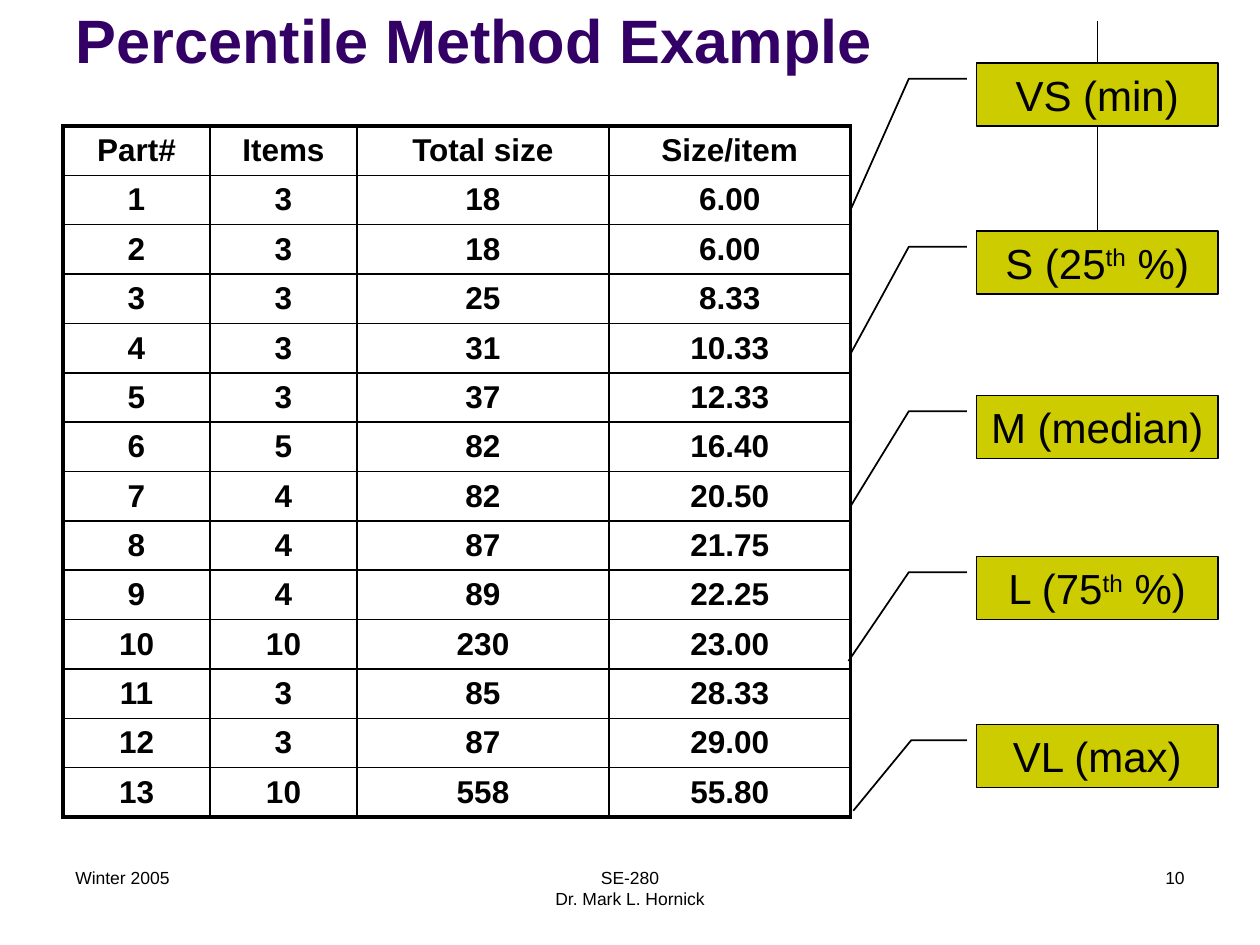
import lxml.etree
import pptx
import pptx.dml.color
import pptx.enum.shapes
import pptx.enum.text
import pptx.oxml.ns
import pptx.util

Pt = pptx.util.Pt
qn = pptx.oxml.ns.qn
ALIGN = pptx.enum.text.PP_ALIGN
ANCHOR = pptx.enum.text.MSO_ANCHOR

TITLE = "Percentile Method Example"
HEADER = ("Part#", "Items", "Total size", "Size/item")
PARTS = [  # items, total size, size per item
    (3, 18, "6.00"), (3, 18, "6.00"), (3, 25, "8.33"), (3, 31, "10.33"),
    (3, 37, "12.33"), (5, 82, "16.40"), (4, 82, "20.50"), (4, 87, "21.75"),
    (4, 89, "22.25"), (10, 230, "23.00"), (3, 85, "28.33"), (3, 87, "29.00"),
    (10, 558, "55.80"),
]
SIZE_CLASSES = [  # label pieces (every second one raised), top, elbow x, tip y, tip x
    (["M (median)"], 226, -0.28, 1.75, -0.52),
    (["VS (min)"], 36, -0.28, 2.32, -0.52),
    (["VL (max)"], 414, -0.27, 1.37, -0.51),
    (["S (25", "th", " %)"], 132, -0.28, 1.94, -0.52),
    (["L (75", "th", " %)"], 318, -0.28, 1.66, -0.53),
]
FOOTERS = [  # lines, left, width, alignment
    (["Winter 2005"], 36, 168, ALIGN.LEFT),
    (["SE-280", "Dr. Mark L. Hornick"], 246, 228, ALIGN.CENTER),
    (["10"], 516, 168, ALIGN.RIGHT),
]

FOOTER_TOP, FOOTER_HEIGHT, FOOTER_SIZE = 492, 36, 10
TABLE_LEFT, TABLE_TOP, ROW_HEIGHT = 36, 72, 27.4
COLUMN_WIDTHS = (84, 84, 144, 138)
INNER_BORDER, OUTER_BORDER = 1, 2.25
LABEL_LEFT, LABEL_WIDTH, LABEL_HEIGHT = 558, 138, 36
BLACK, PURPLE, OLIVE = "000000", "330066", "CCCC00"


def rgb(color):
    return pptx.dml.color.RGBColor.from_string(color)


def add_run(paragraph, text, size, color=BLACK, bold=False):
    run = paragraph.add_run()
    run.text = text
    for key, value in {"name": "Arial", "size": Pt(size), "bold": bold}.items():
        setattr(run.font, key, value)
    run.font.color.rgb = rgb(color)
    return run


def add_text_box(slide, lines, box, size, align=ALIGN.LEFT,
                 anchor=ANCHOR.TOP, **style):
    """Add one paragraph whose lines are split by line breaks."""
    frame = slide.shapes.add_textbox(*map(Pt, box)).text_frame
    frame.word_wrap = True
    frame.vertical_anchor = anchor
    paragraph = frame.paragraphs[0]
    paragraph.alignment = align
    for index, line in enumerate(lines):
        if index:
            paragraph.add_line_break()
        add_run(paragraph, line, size, **style)
    for line_break in paragraph._p.iterchildren(qn("a:br")):
        lxml.etree.SubElement(line_break, qn("a:rPr"), sz=str(size * 100))


def add_cell_borders(cell, widths):
    properties = cell._tc.get_or_add_tcPr()
    for position, (side, width) in enumerate(widths.items()):
        border = lxml.etree.Element(qn(f"a:{side}"), w=str(Pt(width)))
        fill = lxml.etree.SubElement(border, qn("a:solidFill"))
        lxml.etree.SubElement(fill, qn("a:srgbClr"), val=BLACK)
        properties.insert(position, border)


def add_parts_table(slide):
    rows = [HEADER] + [(number, *part) for number, part in enumerate(PARTS, 1)]
    last_row, last_column = len(rows) - 1, len(HEADER) - 1
    table = slide.shapes.add_table(
        len(rows), len(HEADER), Pt(TABLE_LEFT), Pt(TABLE_TOP),
        Pt(sum(COLUMN_WIDTHS)), Pt(ROW_HEIGHT * len(rows))).table
    table.first_row = table.horz_banding = False
    for column, width in zip(table.columns, COLUMN_WIDTHS):
        column.width = Pt(width)
    for r, values in enumerate(rows):
        table.rows[r].height = Pt(ROW_HEIGHT)
        for c, value in enumerate(values):
            cell = table.cell(r, c)
            cell.fill.background()
            cell.margin_top = cell.margin_bottom = Pt(3.3)
            cell.vertical_anchor = ANCHOR.MIDDLE
            paragraph = cell.text_frame.paragraphs[0]
            paragraph.alignment = ALIGN.CENTER
            add_run(paragraph, str(value), 18, bold=True)
            on_edge = {"lnL": c == 0, "lnR": c == last_column,
                       "lnT": r == 0, "lnB": r == last_row}
            add_cell_borders(cell, {side: OUTER_BORDER if edge else INNER_BORDER
                                    for side, edge in on_edge.items()})


def add_size_class(slide, pieces, top, elbow_x, tip_y, tip_x):
    callout = slide.shapes.add_shape(
        pptx.enum.shapes.MSO_SHAPE.LINE_CALLOUT_2,
        Pt(LABEL_LEFT), Pt(top), Pt(LABEL_WIDTH), Pt(LABEL_HEIGHT))
    for index, value in enumerate((0.25, -0.04, 0.25, elbow_x, tip_y, tip_x)):
        callout.adjustments[index] = value
    callout.shadow.inherit = False
    callout.fill.solid()
    callout.fill.fore_color.rgb = rgb(OLIVE)
    callout.line.color.rgb = rgb(BLACK)
    callout.line.width = Pt(1)
    frame = callout.text_frame
    frame.word_wrap = False
    frame.vertical_anchor = ANCHOR.MIDDLE
    paragraph = frame.paragraphs[0]
    paragraph.alignment = ALIGN.CENTER
    for index, piece in enumerate(pieces):
        run = add_run(paragraph, piece, 24)
        if index % 2:
            run.font._element.set("baseline", "30000")


def add_margin_line(slide):
    line = slide.shapes.add_connector(
        pptx.enum.shapes.MSO_CONNECTOR.STRAIGHT,
        Pt(627), Pt(12), Pt(627), Pt(132))
    line.line.color.rgb = rgb(BLACK)
    line.line.width = Pt(0.75)
    lxml.etree.SubElement(line._element.spPr, qn("a:effectLst"))


def main():
    deck = pptx.Presentation()
    deck.slide_width, deck.slide_height = Pt(720), Pt(540)
    slide = deck.slides.add_slide(deck.slide_layouts[6])
    add_margin_line(slide)
    for lines, left, width, align in FOOTERS:
        add_text_box(slide, lines, (left, FOOTER_TOP, width, FOOTER_HEIGHT),
                     FOOTER_SIZE, align)
    add_text_box(slide, [TITLE], (36, 9, 594, 38), 35, anchor=ANCHOR.BOTTOM,
                 color=PURPLE, bold=True)
    add_parts_table(slide)
    for size_class in SIZE_CLASSES:
        add_size_class(slide, *size_class)
    deck.save("out.pptx")


if __name__ == "__main__":
    main()
